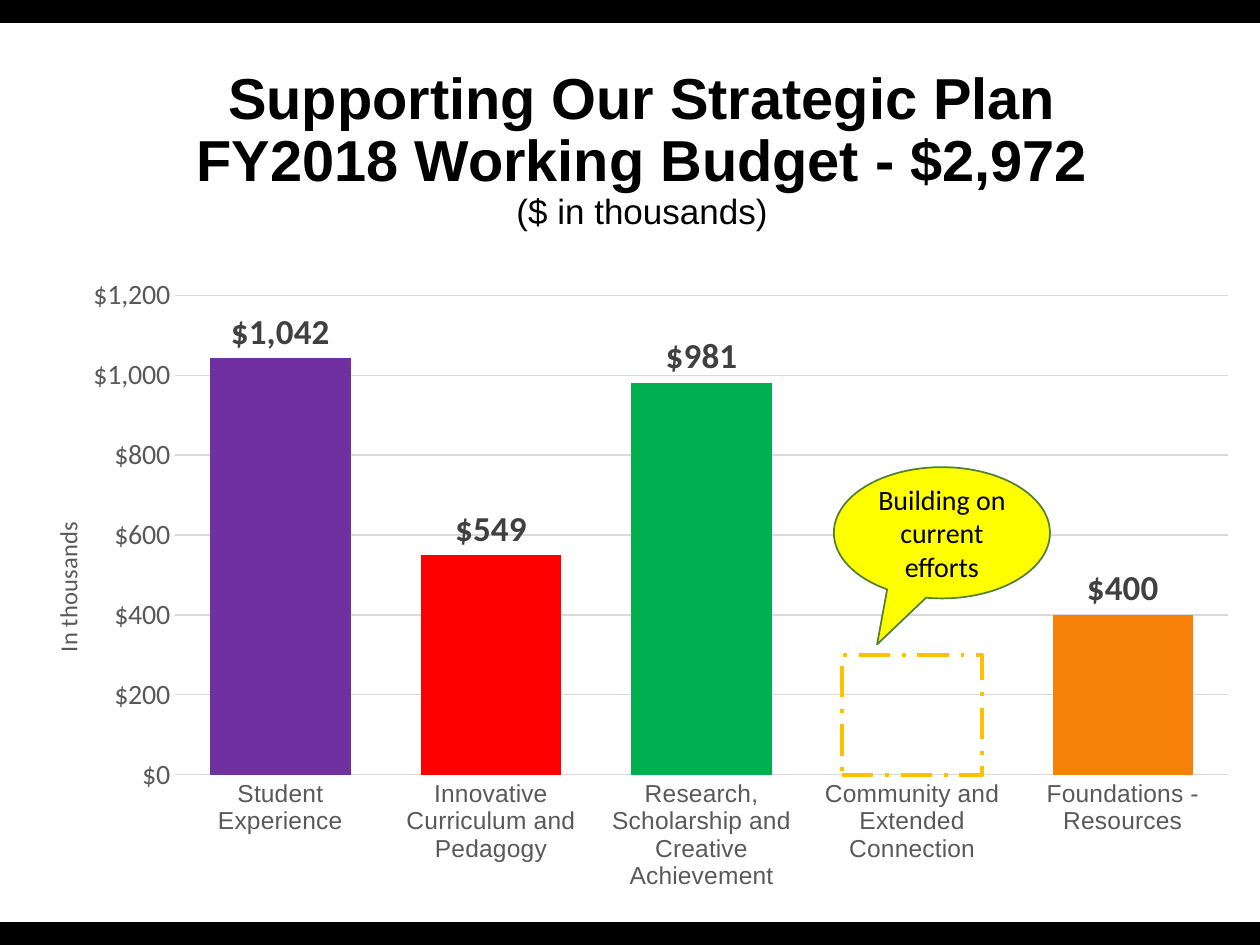
from lxml import etree
from pptx import Presentation
from pptx import util as u
from pptx.chart.data import CategoryChartData
from pptx.dml.color import RGBColor
from pptx.enum import chart as ch, dml, shapes, text
from pptx.oxml import parse_xml
from pptx.oxml.ns import nsdecls, qn

Pt = u.Pt
W, H, BAND = 720, 540, 12.5
MONEY = '"$"#,##0'
BUDGET = [
    ("Student Experience", 1042, "7030A0"),
    ("Innovative Curriculum and Pedagogy", 549, "FF0000"),
    ("Research, Scholarship and Creative Achievement", 981, "00B050"),
    ("Community and Extended Connection", 300, None),
    ("Foundations - Resources", 400, "F78009"),
]


def color(hex_value):
    return RGBColor.from_string(hex_value)


def set_attrs(obj, **values):
    for name, value in values.items():
        setattr(obj, name, value)


def style_font(font, hex_value, **values):
    set_attrs(font, **values)
    font.color.rgb = color(hex_value)


def style_line(line, hex_value, width):
    line.color.rgb = color(hex_value)
    line.width = Pt(width)


def set_layout(parent, **values):
    """Give a chart part a manual layout, in fractions of the chart."""
    new = parse_xml(f'<c:layout {nsdecls("c")}><c:manualLayout/></c:layout>')
    for name, value in values.items():
        etree.SubElement(new[0], qn(f"c:{name}")).set("val", str(value))
    old = parent.find(qn("c:layout"))
    if old is None:
        parent.insert(0, new)
    else:
        parent.replace(old, new)


def add_shape(s, kind, box, fill, line):
    sp = s.shapes.add_shape(kind, *map(Pt, box))
    sp.shadow.inherit = False
    sp.fill.solid()
    sp.fill.fore_color.rgb = color(fill)
    style_line(sp.line, line, 1)
    return sp


def add_title(s, box):
    tf = s.shapes.add_textbox(*map(Pt, box)).text_frame
    set_attrs(tf, word_wrap=True, vertical_anchor=text.MSO_ANCHOR.MIDDLE)
    p = tf.paragraphs[0]
    set_attrs(p, alignment=text.PP_ALIGN.CENTER, line_spacing=0.9)
    lines = [("Supporting Our Strategic Plan", 33, True),
             ("FY2018 Working Budget - $2,972", 33, True),
             ("($ in thousands)", 20, False)]
    for i, (line, size, bold) in enumerate(lines):
        if i:
            p.add_line_break()
        r = p.add_run()
        r.text = line
        style_font(r.font, "000000", name="Arial", size=Pt(size), bold=bold)


def add_budget_chart(s, box):
    data = CategoryChartData(number_format=MONEY)
    data.categories = [name for name, _, _ in BUDGET]
    data.add_series("Series 1", [value for _, value, _ in BUDGET])
    chart = s.shapes.add_chart(ch.XL_CHART_TYPE.COLUMN_CLUSTERED,
                               *map(Pt, box), data).chart
    set_attrs(chart, has_legend=False, has_title=False)
    style_font(chart.font, "000000", name="Calibri", size=Pt(10))
    set_layout(chart._chartSpace.chart.plotArea, layoutTarget="inner",
               xMode="edge", yMode="edge", x=0.115, y=0.157, w=0.859, h=0.568)

    # Axes
    cat, val = chart.category_axis, chart.value_axis
    for axis, font, size in ((cat, "Arial", 14), (val, "Calibri", 16)):
        set_attrs(axis, major_tick_mark=ch.XL_TICK_MARK.NONE,
                  minor_tick_mark=ch.XL_TICK_MARK.NONE)
        style_font(axis.tick_labels.font, "595959", name=font, size=Pt(size))
    style_line(cat.format.line, "D9D9D9", 0.75)
    set_attrs(val, minimum_scale=0, maximum_scale=1200, major_unit=200,
              has_major_gridlines=True)
    style_line(val.major_gridlines.format.line, "D9D9D9", 0.75)
    val.format.line.fill.background()
    set_attrs(val.tick_labels, number_format=MONEY, number_format_is_linked=False)
    r = val.axis_title.text_frame.paragraphs[0].add_run()
    r.text = "In thousands"
    style_font(r.font, "595959", name="Calibri", size=Pt(14), bold=False)
    set_layout(val.axis_title._element, xMode="edge", yMode="edge", x=0.01, y=0.42)

    # Columns and their labels
    plot = chart.plots[0]
    set_attrs(plot, gap_width=50, overlap=-26, vary_by_categories=False)
    series = plot.series[0]
    series.invert_if_negative = False
    labels = series.data_labels
    set_attrs(labels, show_value=True, number_format=MONEY,
              number_format_is_linked=False,
              position=ch.XL_LABEL_POSITION.OUTSIDE_END)
    style_font(labels.font, "404040", name="Calibri", size=Pt(20), bold=True)
    for i, (_, _, fill) in enumerate(BUDGET):
        fmt = series.points[i].format
        if fill:
            fmt.fill.solid()
            fmt.fill.fore_color.rgb = color(fill)
        else:
            # Dashed outline without a label
            fmt.fill.background()
            style_line(fmt.line, "FFC000", 2.25)
            fmt.line.dash_style = dml.MSO_LINE.LONG_DASH_DOT
            labels._element.insert(0, parse_xml(
                f'<c:dLbl {nsdecls("c")}><c:idx val="{i}"/>'
                '<c:delete val="1"/></c:dLbl>'))


def add_callout(s, box):
    sp = add_shape(s, shapes.MSO_SHAPE.OVAL_CALLOUT, box, "FFFF00", "538035")
    sp.adjustments[0], sp.adjustments[1] = -0.3, 0.85
    tf = sp.text_frame
    set_attrs(tf, word_wrap=True, vertical_anchor=text.MSO_ANCHOR.MIDDLE)
    p = tf.paragraphs[0]
    p.alignment = text.PP_ALIGN.CENTER
    r = p.add_run()
    r.text = "Building on current efforts"
    style_font(r.font, "000000", name="Calibri", size=Pt(16))


def add_bands(s, box):
    left, top, width, height = box
    for y in (top + height - BAND, top):
        add_shape(s, shapes.MSO_SHAPE.RECTANGLE, (left, y, width, BAND),
                  "000000", "000000")


def main():
    prs = Presentation()
    set_attrs(prs, slide_width=Pt(W), slide_height=Pt(H))
    s = prs.slides.add_slide(prs.slide_layouts[6])
    add_title(s, (51, 20, 632, 132))
    add_budget_chart(s, (19.5, 93, 700.5, 482.5))
    add_callout(s, (476.5, 267, 123.5, 75))
    add_bands(s, (0, 0, W, H))
    prs.save("out.pptx")


if __name__ == "__main__":
    main()
